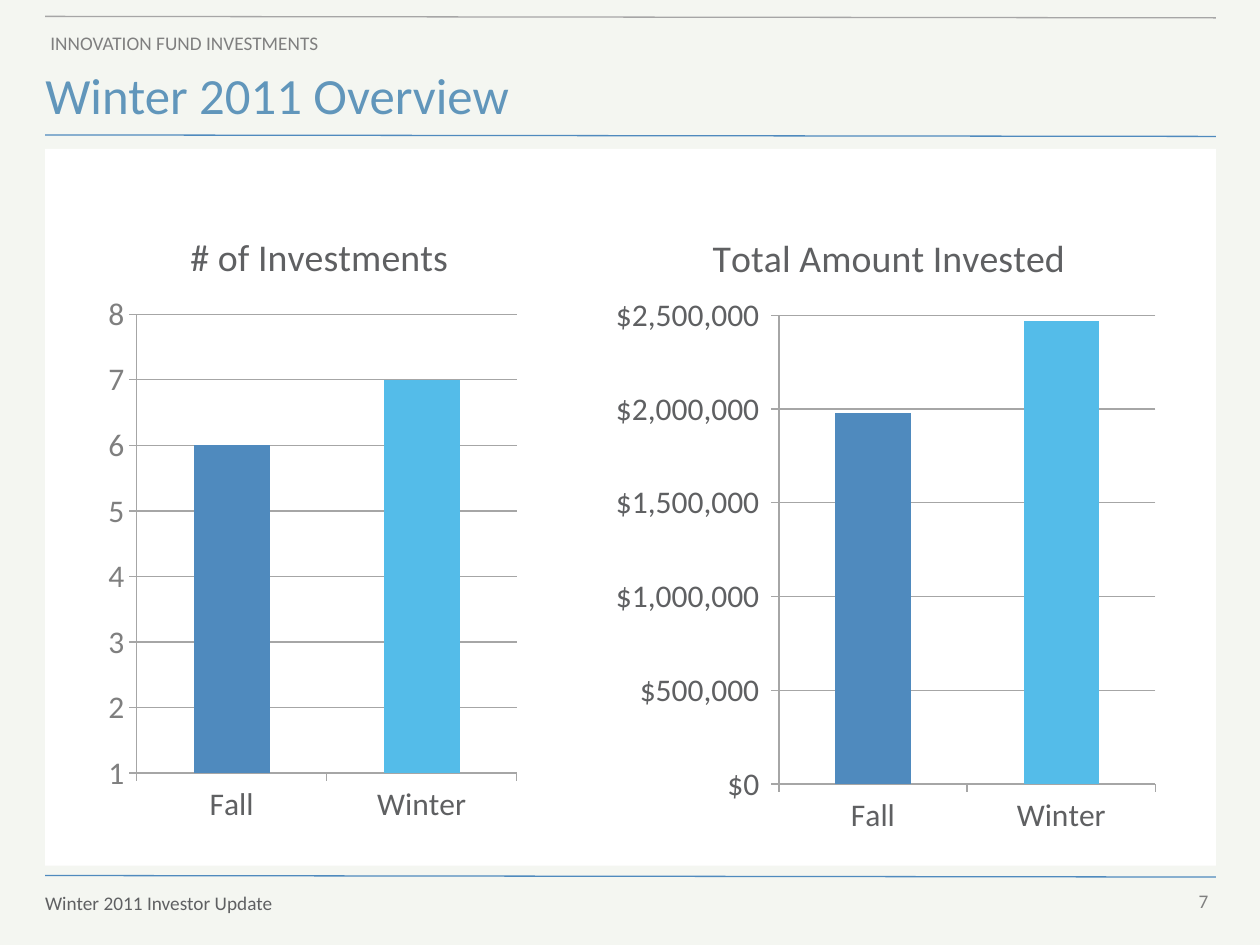
from lxml.etree import SubElement
from pptx import Presentation
from pptx.chart.data import CategoryChartData
from pptx.dml.color import RGBColor
from pptx.enum.chart import XL_CHART_TYPE, XL_TICK_MARK
from pptx.enum.shapes import MSO_CONNECTOR, MSO_SHAPE
from pptx.enum.text import MSO_ANCHOR, MSO_AUTO_SIZE, PP_ALIGN
from pptx.oxml import parse_xml
from pptx.oxml.ns import nsdecls, qn
from pptx.util import Cm, Pt

INK = {
    "back": "F4F6F1", "panel": "FFFFFF", "title": "6196BB", "text": "5F6062",
    "grey": "7F7F7F", "rule": "A6A6A6", "blue": "4F8ABE", "sky": "54BCE9",
}
LEFT, RIGHT = 0.91, 24.51


def place(part, index, **spots):
    """Give a chart part a manual layout, in fractions of the chart."""
    for old in part.findall(qn("c:layout")):
        part.remove(old)
    layout = parse_xml(f"<c:layout {nsdecls('c')}><c:manualLayout/></c:layout>")
    for tag, val in spots.items():
        SubElement(layout[0], qn(f"c:{tag}")).set("val", str(val))
    part.insert(index, layout)


class Deck:
    font = "Calibri"

    def __init__(self):
        self.prs = Presentation()
        self.prs.slide_width, self.prs.slide_height = Cm(25.4), Cm(19.05)
        self.slide = self.prs.slides.add_slide(self.prs.slide_layouts[1])
        self.shapes = self.slide.shapes
        self.paint(self.slide.background.fill, "back")

    def paint(self, fill, ink):
        fill.solid()
        fill.fore_color.rgb = RGBColor.from_string(INK[ink])

    def style(self, font, size, ink):
        font.name, font.size, font.bold = self.font, Pt(size), False
        font.color.rgb = RGBColor.from_string(INK[ink])

    def stroke(self, line, ink):
        line.color.rgb = RGBColor.from_string(INK[ink])
        line.width = Pt(0.75)

    def put_text(self, shape, box, text, size, ink,
                 align=PP_ALIGN.LEFT, anchor=MSO_ANCHOR.MIDDLE):
        shape.left, shape.top, shape.width, shape.height = map(Cm, box)
        frame = shape.text_frame
        frame.word_wrap, frame.auto_size = True, MSO_AUTO_SIZE.NONE
        frame.vertical_anchor = anchor
        par = frame.paragraphs[0]
        par.alignment, par.space_before = align, Pt(0)
        run = par.add_run()
        run.text = text
        self.style(run.font, size, ink)
        return par

    def title(self, box, text):
        self.put_text(self.shapes.title, box, text, 29, "title")

    def header(self, box, text):
        par = self.put_text(self.slide.placeholders[1], box, text, 11, "grey",
                            anchor=MSO_ANCHOR.TOP)
        props = par._p.get_or_add_pPr()
        props.set("marL", "0")
        props.set("indent", "0")
        SubElement(props, qn("a:buNone"))

    def label(self, box, text, ink, align=PP_ALIGN.LEFT):
        shape = self.shapes.add_textbox(*map(Cm, box))
        self.put_text(shape, box, text, 11, ink, align)

    def rule(self, top, ink):
        line = self.shapes.add_connector(
            MSO_CONNECTOR.STRAIGHT, Cm(LEFT), Cm(top), Cm(RIGHT), Cm(top + 0.03))
        self.stroke(line.line, ink)
        SubElement(line._element.spPr, qn("a:effectLst"))

    def panel(self, box):
        shape = self.shapes.add_shape(MSO_SHAPE.RECTANGLE, *map(Cm, box))
        shape.shadow.inherit = False
        self.paint(shape.fill, "panel")
        shape.line.fill.background()

    def chart(self, box, name, vals, kind, scale, form, ink, head, plot):
        data = CategoryChartData()
        data.categories = ["Fall", "Winter"]
        data.add_series(name, vals)
        chart = self.shapes.add_chart(kind, *map(Cm, box), data).chart
        self.style(chart.font, 18, "grey")
        chart.has_legend = False

        chart.has_title = True
        run = chart.chart_title.text_frame.paragraphs[0].add_run()
        run.text = name
        self.style(run.font, 21.6, "text")
        place(chart.chart_title._element, 1,
              xMode="edge", yMode="edge", x=head, y=0.05)
        x, y, w, h = plot
        place(chart._chartSpace.chart.plotArea, 0, layoutTarget="inner",
              xMode="edge", yMode="edge", x=x, y=y, w=w, h=h)

        cat, val = chart.category_axis, chart.value_axis
        for axis, tone in ((cat, "text"), (val, ink)):
            axis.major_tick_mark = XL_TICK_MARK.OUTSIDE
            axis.minor_tick_mark = XL_TICK_MARK.NONE
            self.stroke(axis.format.line, "rule")
            self.style(axis.tick_labels.font, 18, tone)
        val.minimum_scale, val.maximum_scale, val.major_unit = scale
        val.has_major_gridlines = True
        self.stroke(val.major_gridlines.format.line, "rule")
        val.tick_labels.number_format = form
        val.tick_labels.number_format_is_linked = False

        bars = chart.plots[0]
        bars.gap_width, bars.vary_by_categories = 150, False
        if kind == XL_CHART_TYPE.COLUMN_STACKED:
            bars.overlap = 100
        series = bars.series[0]
        self.paint(series.format.fill, "blue")
        self.paint(series.points[1].format.fill, "sky")


def main():
    deck = Deck()
    for top, ink in ((0.33, "rule"), (2.72, "blue"), (17.65, "blue")):
        deck.rule(top, ink)
    deck.panel((LEFT, 3, RIGHT - LEFT, 14.45))
    deck.title((0.66, 1.14, 22.86, 1.52), "Winter 2011 Overview")
    deck.header((0.76, 0.51, 14.6, 0.76), "INNOVATION FUND INVESTMENTS")
    deck.label((18.69, 17.65, 5.92, 1.02), "7", "grey", PP_ALIGN.RIGHT)
    deck.label((0.66, 17.83, 6.53, 0.74), "Winter 2011 Investor Update", "text")
    deck.chart((1.98, 3.86, 8.61, 13.03), "# of Investments", (6, 7),
               XL_CHART_TYPE.COLUMN_STACKED, (1, 8, 1), "General", "grey",
               0.2, (0.09, 0.19, 0.89, 0.71))
    deck.chart((12.19, 3.86, 11.33, 13.13), "Total Amount Invested",
               (1980000, 2470000), XL_CHART_TYPE.COLUMN_CLUSTERED,
               (0, 2500000, 500000), '"$"#,##0_);[Red]\\("$"#,##0\\)', "text",
               0.18, (0.31, 0.19, 0.67, 0.72))
    deck.prs.save("out.pptx")


if __name__ == "__main__":
    main()
